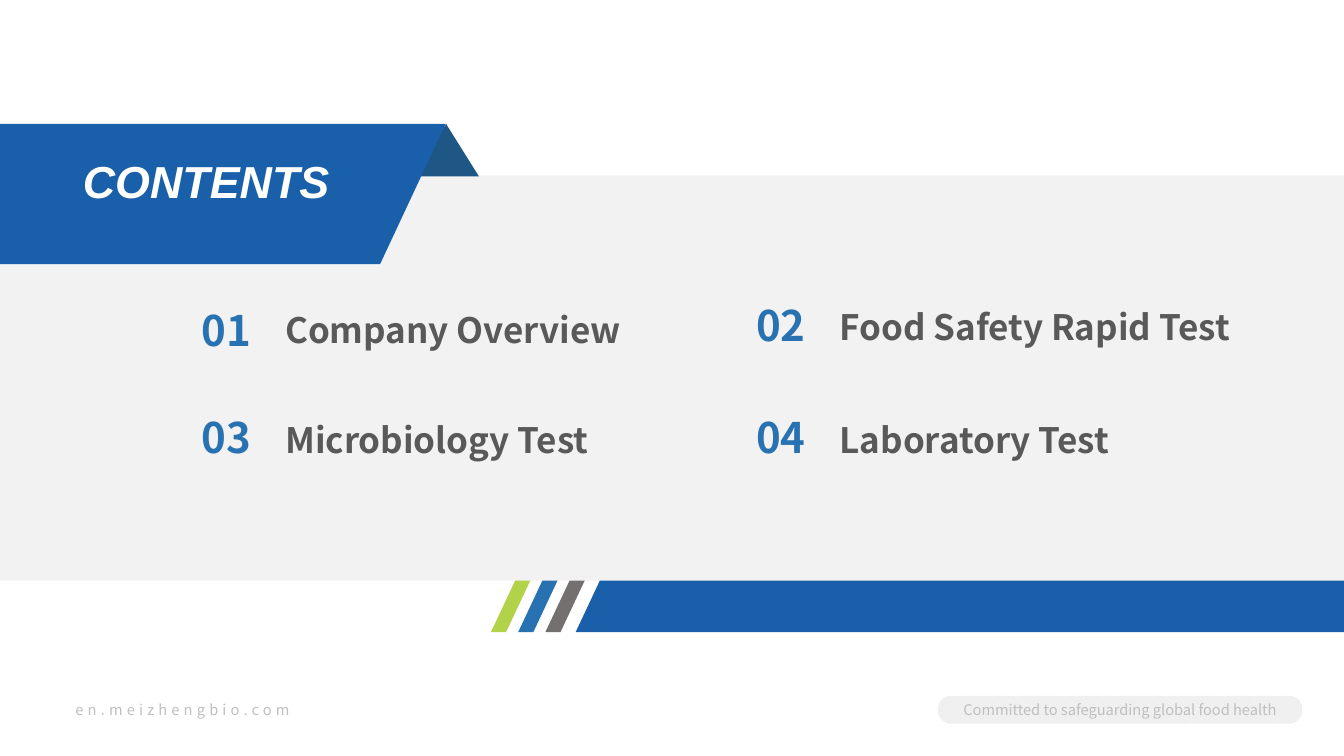
from pptx import Presentation
from pptx.dml.color import RGBColor
from pptx.enum import dml, shapes, text
from pptx.util import Inches, Pt

BLUE = RGBColor(0x19, 0x5F, 0xA9)
MID_BLUE = RGBColor(0x28, 0x72, 0xB2)
FOLD_BLUE = RGBColor(0x1E, 0x56, 0x85)
GREEN = RGBColor(0xB2, 0xD2, 0x49)
WARM_GRAY = RGBColor(0x75, 0x70, 0x70)
TEXT_GRAY = RGBColor(0x59, 0x59, 0x59)
FOOTER_GRAY = RGBColor(0xBF, 0xBF, 0xBF)
PILL_GRAY = RGBColor(0xE7, 0xE6, 0xE6)
PANEL_GRAY = RGBColor(0xF2, 0xF2, 0xF2)
WHITE = RGBColor(0xFF, 0xFF, 0xFF)
SANS = "Noto Sans CJK SC"
LEFT, CENTER = text.PP_ALIGN.LEFT, text.PP_ALIGN.CENTER

prs = Presentation()
prs.slide_width, prs.slide_height = Inches(13.33), Inches(7.5)
slide = prs.slides.add_slide(prs.slide_layouts[6])


def add_text(words, left, top, width, height, size, color, font=SANS, bold=False,
             italic=False, align=LEFT, wrap=False, spacing=0):
    """Place one line of text; spacing is the extra gap between letters in points."""
    box = slide.shapes.add_textbox(Inches(left), Inches(top), Inches(width), Inches(height))
    frame = box.text_frame
    frame.word_wrap = wrap
    line = frame.paragraphs[0]
    line.alignment = align
    run = line.add_run()
    run.text = words
    run.font.name, run.font.size = font, Pt(size)
    run.font.bold, run.font.italic = bold, italic
    run.font.color.rgb = color
    if spacing:
        run._r.get_or_add_rPr().set("spc", str(spacing * 100))


def add_block(color, kind=None, area=None, points=None):
    """Draw a flat block, either a preset in an area or an outline through points."""
    if points:
        corners = [(Inches(x), Inches(y)) for x, y in points]
        builder = slide.shapes.build_freeform(*corners[0])
        builder.add_line_segments(corners[1:])
        block = builder.convert_to_shape()
    else:
        block = slide.shapes.add_shape(kind, *[Inches(length) for length in area])
    block.shadow.inherit = False
    block.fill.solid()
    block.fill.fore_color.rgb = color
    block.line.fill.background()
    return block


# Footer
add_text("en.meizhengbio.com", 0.65, 6.9, 3.39, 0.28, 10.5, FOOTER_GRAY, wrap=True, spacing=3)
pill = add_block(PILL_GRAY, shapes.MSO_SHAPE.ROUNDED_RECTANGLE, (9.3, 6.9, 3.62, 0.28))
pill.adjustments[0] = 0.5
pill.fill.patterned()
pill.fill.pattern = dml.MSO_PATTERN.LIGHT_DOWNWARD_DIAGONAL
pill.fill.fore_color.rgb = PILL_GRAY
pill.fill.back_color.rgb = PANEL_GRAY
add_text("Committed to safeguarding global food health", 9.37, 6.9, 3.48, 0.28, 10.5,
         FOOTER_GRAY, align=CENTER, wrap=True)

# Slanted stripes and bar, partly covered by the gray panel
STRIPE_TOP, STRIPE_BOTTOM, SLANT = 4.95, 6.27, 0.62
for index, color in enumerate((GREEN, MID_BLUE, WARM_GRAY)):
    foot = 4.87 + 0.27 * index
    add_block(color, points=[(foot + SLANT, STRIPE_TOP), (foot + SLANT + 0.15, STRIPE_TOP),
                             (foot + 0.15, STRIPE_BOTTOM), (foot, STRIPE_BOTTOM)])
add_block(BLUE, points=[(5.71 + SLANT, STRIPE_TOP), (13.33, STRIPE_TOP),
                        (13.33, STRIPE_BOTTOM), (5.71, STRIPE_BOTTOM)])
add_block(PANEL_GRAY, shapes.MSO_SHAPE.RECTANGLE, (0, 1.74, 13.33, 4.02))

# Folded title banner
add_block(FOLD_BLUE, shapes.MSO_SHAPE.ISOSCELES_TRIANGLE, (4.1, 1.23, 0.65, 0.52))
add_block(BLUE, points=[(0, 1.23), (4.42, 1.23), (3.77, 2.62), (0, 2.62)])
add_text("CONTENTS", 0.69, 1.48, 2.71, 0.64, 32, WHITE, font="Arial", bold=True,
         italic=True, align=CENTER)

# Chapters: title, width, left, top of number, top of title
chapters = [
    ("Company Overview", 3.64, 1.9, 2.97, 3.01),
    ("Food Safety Rapid Test", 4.24, 7.4, 2.92, 2.98),
    ("Microbiology Test", 3.48, 1.9, 4.03, 4.1),
    ("Laboratory Test", 2.96, 7.4, 4.03, 4.1),
]
for number, (title, width, left, number_top, title_top) in enumerate(chapters, 1):
    add_text(f"{number:02d}", left, number_top, 0.71, 0.6, 30, MID_BLUE, bold=True)
    add_text(title, left + 0.83, title_top, width, 0.52, 25, TEXT_GRAY, bold=True)

prs.save("out.pptx")
